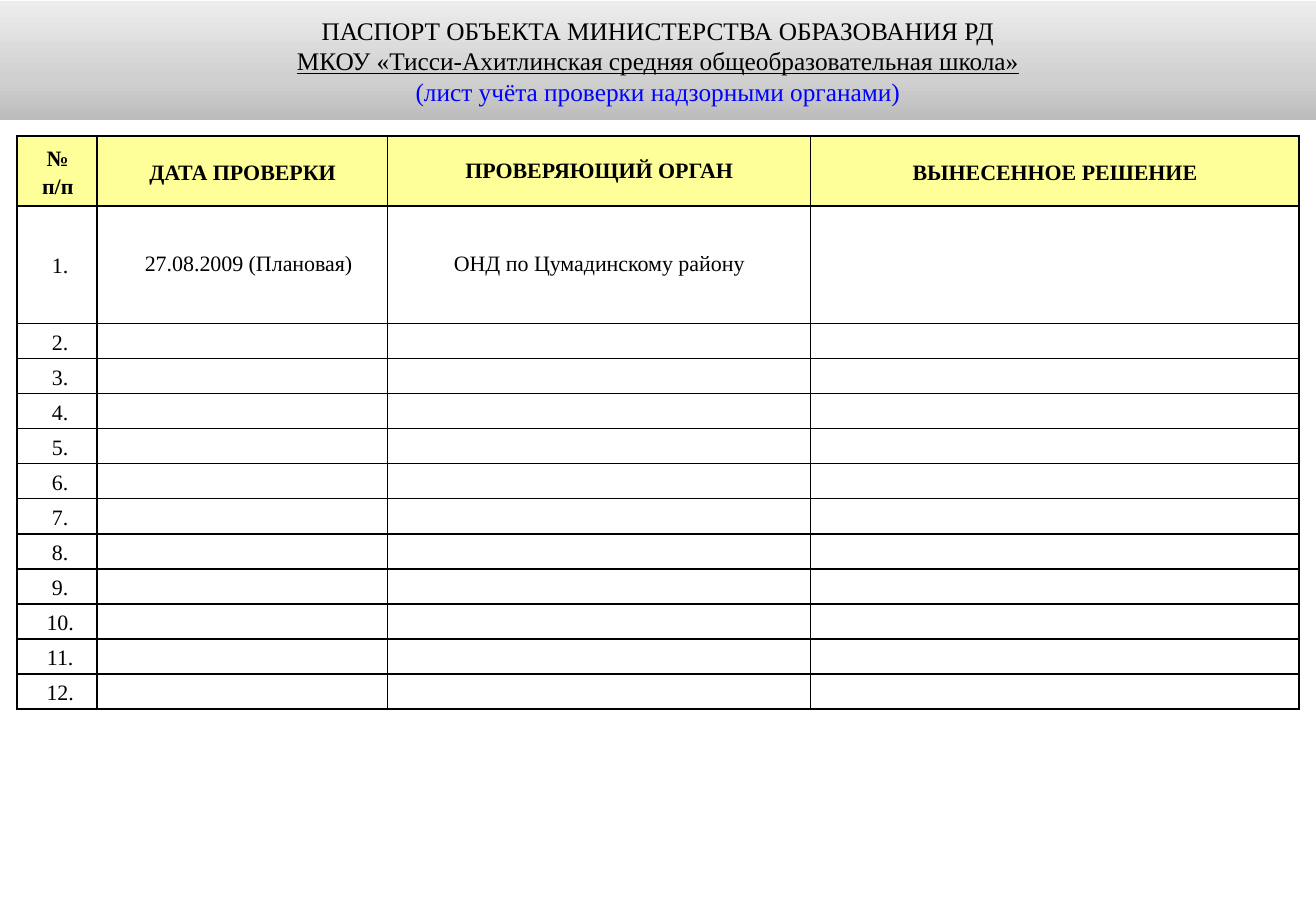
from copy import deepcopy
from dataclasses import dataclass

from lxml.etree import SubElement
from pptx import Presentation
from pptx.dml.color import RGBColor as RGB
from pptx.enum.text import MSO_ANCHOR as ANCHOR, MSO_AUTO_SIZE as AUTO, PP_ALIGN as ALIGN
from pptx.oxml.ns import qn
from pptx.util import Inches, Pt


@dataclass(frozen=True)
class Theme:
    """Colours, font and type sizes of the slide."""
    font: str = "Times New Roman"
    title_size: int = 15
    table_size: int = 13
    ink: str = "000000"
    accent: str = "0000FF"
    header: str = "FFFF99"
    paper: str = "FFFFFF"
    band: tuple = ((0, "BCBCBC"), (0.35, "D0D0D0"), (1, "EDEDED"))


THEME = Theme()
WIDTH, HEIGHT = Inches(10.83), Inches(7.5)
COLS = (0.66, 2.39, 3.48, 4.02)
ROWS = (0.58, 0.97) + (0.29,) * 11
HEADERS = ("№\nп/п", "ДАТА ПРОВЕРКИ", "ПРОВЕРЯЮЩИЙ ОРГАН", "ВЫНЕСЕННОЕ РЕШЕНИЕ")
CHECKS = [("27.08.2009 (Плановая)", "ОНД по Цумадинскому району", "")]
CHECKS += [("", "", "")] * 11
EXACT = {(0, 2), (1, 1), (1, 2)}
TITLE = (
    ("ПАСПОРТ ОБЪЕКТА МИНИСТЕРСТВА ОБРАЗОВАНИЯ РД", THEME.ink, False),
    ("МКОУ «Тисси-Ахитлинская средняя общеобразовательная школа»", THEME.ink, True),
    ("(лист учёта проверки надзорными органами)", THEME.accent, False),
)


def style(p, size, color, bold=False, underline=False):
    """Centre a paragraph and set its font."""
    p.alignment = ALIGN.CENTER
    font = p.font
    font.name, font.size = THEME.font, Pt(size)
    font.bold, font.underline = bold, underline
    font.color.rgb = RGB.from_string(color)


def fill_band(sp):
    """Fill a shape with the upward grey gradient."""
    sp.fill.gradient()
    sp.fill.gradient_angle = 90
    stops = sp._element.spPr.find(qn("a:gradFill")).find(qn("a:gsLst"))
    stops.insert(1, deepcopy(stops[0]))
    for stop, (position, color) in zip(sp.fill.gradient_stops, THEME.band):
        stop.position = position
        stop.color.rgb = RGB.from_string(color)


def add_title(s, left, top, width, height):
    """Place the heading band in the given box."""
    sp = s.shapes.title
    sp.left, sp.top, sp.width, sp.height = left, top, width, height
    fill_band(sp)
    tf = sp.text_frame
    tf.word_wrap, tf.auto_size = True, AUTO.NONE
    tf.vertical_anchor = ANCHOR.MIDDLE
    tf.margin_left = tf.margin_right = Inches(0.09)
    tf.margin_top = tf.margin_bottom = Inches(0.05)
    tf.text = "\n".join(text for text, _, _ in TITLE)
    for p, (_, color, underline) in zip(tf.paragraphs, TITLE):
        style(p, THEME.title_size, color, underline=underline)


def add_borders(cell):
    """Draw a one-point line on each side of a cell."""
    tc_pr = cell._tc.get_or_add_tcPr()
    for side in ("lnL", "lnR", "lnT", "lnB"):
        ln = SubElement(tc_pr, qn(f"a:{side}"), w=str(Pt(1)))
        SubElement(SubElement(ln, qn("a:solidFill")), qn("a:srgbClr"), val=THEME.ink)


def fill_cell(cell, text, row, col):
    """Write and format one table cell."""
    add_borders(cell)
    cell.fill.solid()
    cell.fill.fore_color.rgb = RGB.from_string(THEME.paper if row else THEME.header)
    cell.vertical_anchor = ANCHOR.MIDDLE
    cell.margin_left = cell.margin_right = Inches(0.03)
    cell.margin_top = cell.margin_bottom = 0
    cell.text = text
    indent = (0.05 if row else 0.01) if col == 0 else 0.1 if (row, col) == (1, 1) else 0
    for p in cell.text_frame.paragraphs:
        p._p.get_or_add_pPr().set("marL", str(Inches(indent)))
        p.line_spacing = Pt(14) if (row, col) in EXACT else 1.15 if text else 1
        style(p, THEME.table_size, THEME.ink, bold=row == 0)
        if not text:
            SubElement(p._p, qn("a:endParaRPr"), sz=str(THEME.table_size * 100))


def add_checks(s, left, top, width, height):
    """Place the table of inspections in the given box."""
    table = s.shapes.add_table(len(ROWS), len(COLS), left, top, width, height).table
    for column, share in zip(table.columns, COLS):
        column.width = int(width * share / sum(COLS))
    for row, share in zip(table.rows, ROWS):
        row.height = int(height * share / sum(ROWS))
    lines = [HEADERS] + [(f"{n}.", *check) for n, check in enumerate(CHECKS, 1)]
    for r, line in enumerate(lines):
        for c, text in enumerate(line):
            fill_cell(table.cell(r, c), text, r, c)


def main():
    """Build and save the slide."""
    prs = Presentation()
    prs.slide_width, prs.slide_height = WIDTH, HEIGHT
    s = prs.slides.add_slide(prs.slide_layouts[5])
    add_title(s, 0, Inches(0.01), WIDTH, Inches(0.98))
    margin = Inches(0.14)
    add_checks(s, margin, Inches(1.12), WIDTH - 2 * margin, Inches(4.72))
    prs.save("out.pptx")


if __name__ == "__main__":
    main()
